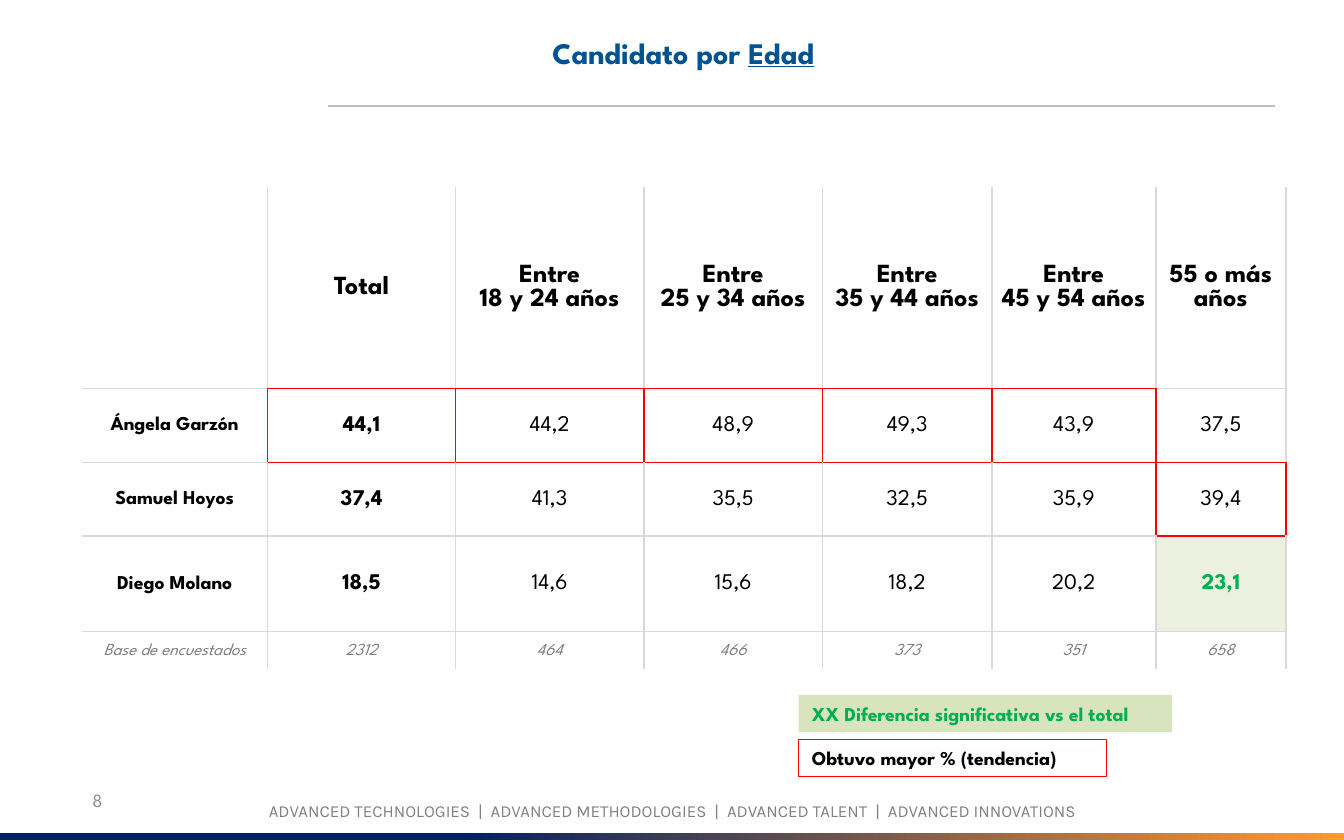
from dataclasses import dataclass
from typing import Optional

from lxml.etree import SubElement
from pptx import Presentation
from pptx.dml.color import RGBColor
from pptx.enum.shapes import MSO_CONNECTOR as Connector, MSO_SHAPE as Shape
from pptx.enum.text import MSO_ANCHOR as Anchor, PP_ALIGN as Align
from pptx.oxml.ns import qn
from pptx.util import Pt

WHITE = RGBColor(0xFF, 0xFF, 0xFF)
BLACK = RGBColor(0, 0, 0)
RED = RGBColor(0xFF, 0, 0)
GREEN = RGBColor(0, 0xB0, 0x50)
GREEN_PALE = RGBColor(0xEB, 0xF1, 0xDE)
GREEN_LIGHT = RGBColor(0xD7, 0xE4, 0xBD)
BLUE = RGBColor(0, 0x53, 0x92)
NAVY = RGBColor(0, 0x20, 0x60)
ORANGE = RGBColor(0xFF, 0x99, 0x33)
GRID = RGBColor(0xD9, 0xD9, 0xD9)
RULE = RGBColor(0xBF, 0xBF, 0xBF)
GREY = RGBColor(0x80, 0x80, 0x80)
PAGE_GREY = RGBColor(0x8C, 0x8C, 0x8C)

SPARTAN, KARLA = "League Spartan", "Karla"


@dataclass(frozen=True)
class Style:
    size: float
    color: RGBColor = BLACK
    bold: bool = False
    italic: bool = False
    face: str = SPARTAN


@dataclass(frozen=True)
class Label:
    text: str
    left: float
    top: float
    width: float
    height: float
    style: Style
    anchor: Anchor = Anchor.MIDDLE


@dataclass(frozen=True)
class LegendKey:
    text: str
    top: float
    width: float
    fill: RGBColor
    color: RGBColor
    outline: Optional[RGBColor] = None


HEADER = Style(14, bold=True)
NAME = Style(10.5, bold=True)
TOTAL = Style(12, bold=True)
VALUE = Style(12)
SIGNIFICANT = Style(12, GREEN, bold=True)
BASE = Style(9, GREY, italic=True)

COLUMN_WIDTHS = [99.4, 100.8, 100.8, 95.8, 90.7, 87.8, 69.8]
ROW_HEIGHTS = [108, 39.6, 39.6, 51.1, 20.2]
RESULTS = [
    ["", "Total", "Entre\n18 y 24 años", "Entre\n25 y 34 años",
     "Entre\n35 y 44 años", "Entre\n45 y 54 años", "55 o más años"],
    ["Ángela Garzón", "44,1", "44,2", "48,9", "49,3", "43,9", "37,5"],
    ["Samuel Hoyos", "37,4", "41,3", "35,5", "32,5", "35,9", "39,4"],
    ["Diego Molano", "18,5", "14,6", "15,6", "18,2", "20,2", "23,1"],
    ["Base de encuestados", "2312", "464", "466", "373", "351", "658"],
]
LAST_ROW, LAST_COLUMN = len(RESULTS) - 1, len(RESULTS[0]) - 1
SIGNIFICANT_CELL = (3, 6)
# The candidate with the highest share in each column
LEADERS = {
    (max(range(1, LAST_ROW), key=lambda row: float(RESULTS[row][column].replace(",", "."))), column)
    for column in range(1, LAST_COLUMN + 1)
}

LABELS = [
    Label("ADVANCED TECHNOLOGIES  |  ADVANCED METHODOLOGIES  |  ADVANCED TALENT  |  ADVANCED INNOVATIONS",
          -0.7, 422.6, 721.4, 23.8, Style(9, GREY, face=KARLA)),
    Label("8", 13, 416.9, 78.5, 23.8, Style(10, PAGE_GREY)),
    Label("Candidato por ", 87.8, 15.1, 556.6, 26.6, Style(16, BLUE, bold=True), Anchor.TOP),
]
LEGEND = [
    LegendKey("Obtuvo mayor % (tendencia)", 396.2, 165, WHITE, BLACK, RED),
    LegendKey("XX Diferencia significativa vs el total", 372.3, 200, GREEN_LIGHT, GREEN),
]


def write(frame, text: str, style: Style, align: Align = Align.CENTER) -> None:
    frame.text = text
    for paragraph in frame.paragraphs:
        paragraph.alignment = align
        font = paragraph.font
        font.name, font.size = style.face, Pt(style.size)
        font.bold, font.italic = style.bold, style.italic
        font.color.rgb = style.color


def add_label(slide, label: Label):
    box = slide.shapes.add_textbox(Pt(label.left), Pt(label.top), Pt(label.width), Pt(label.height))
    box.text_frame.word_wrap = True
    box.text_frame.vertical_anchor = label.anchor
    write(box.text_frame, label.text, label.style)
    return box.text_frame


def add_legend_key(slide, key: LegendKey) -> None:
    swatch = slide.shapes.add_shape(Shape.RECTANGLE, Pt(427.9), Pt(key.top), Pt(key.width), Pt(19.9))
    swatch.shadow.inherit = False
    swatch.fill.solid()
    swatch.fill.fore_color.rgb = key.fill
    if key.outline:
        swatch.line.color.rgb = key.outline
        swatch.line.width = Pt(0.75)
    else:
        swatch.line.fill.background()
    swatch.text_frame.word_wrap = False
    swatch.text_frame.vertical_anchor = Anchor.TOP
    write(swatch.text_frame, key.text, Style(10.5, key.color, bold=True), Align.LEFT)


def cell_style(row: int, column: int) -> Style:
    if row == 0:
        return HEADER
    if row == LAST_ROW:
        return BASE
    if (row, column) == SIGNIFICANT_CELL:
        return SIGNIFICANT
    return {0: NAME, 1: TOTAL}.get(column, VALUE)


def set_borders(cell, row: int, column: int) -> None:
    """Red around a leading share, grey on the other grid lines, open outer edges."""
    edges = [
        ("a:lnL", (row, column - 1), column > 0),
        ("a:lnR", (row, column + 1), True),
        ("a:lnT", (row - 1, column), row > 0),
        ("a:lnB", (row + 1, column), row < LAST_ROW),
    ]
    properties = cell._tc.get_or_add_tcPr()
    for tag, neighbour, visible in edges:
        edge = SubElement(properties, qn(tag), w=str(Pt(1)))
        if visible:
            color = RED if LEADERS & {(row, column), neighbour} else GRID
            SubElement(SubElement(edge, qn("a:solidFill")), qn("a:srgbClr"), val=str(color))
        else:
            SubElement(edge, qn("a:noFill"))


def add_results(slide) -> None:
    table = slide.shapes.add_table(
        len(ROW_HEIGHTS), len(COLUMN_WIDTHS), Pt(43.9), Pt(100.1),
        Pt(sum(COLUMN_WIDTHS)), Pt(sum(ROW_HEIGHTS))).table
    table.first_row = table.horz_banding = False
    for column, width in zip(table.columns, COLUMN_WIDTHS):
        column.width = Pt(width)
    for row, height in zip(table.rows, ROW_HEIGHTS):
        row.height = Pt(height)
    for row, texts in enumerate(RESULTS):
        for column, text in enumerate(texts):
            cell = table.cell(row, column)
            cell.margin_left = cell.margin_right = cell.margin_top = Pt(0.72)
            cell.margin_bottom = Pt(0)
            cell.vertical_anchor = Anchor.MIDDLE
            write(cell.text_frame, text, cell_style(row, column))
            set_borders(cell, row, column)
            if (row, column) == SIGNIFICANT_CELL:
                cell.fill.solid()
                cell.fill.fore_color.rgb = GREEN_PALE
            else:
                cell.fill.background()


def main() -> None:
    deck = Presentation()
    deck.slide_width, deck.slide_height = Pt(720), Pt(450)
    slide = deck.slides.add_slide(deck.slide_layouts[6])

    # Footer band
    band = slide.shapes.add_shape(Shape.RECTANGLE, Pt(0), Pt(446.4), Pt(720), Pt(3.6))
    band.shadow.inherit = False
    band.line.fill.background()
    band.fill.gradient()
    band.fill.gradient_angle = 0
    for stop, position, color in zip(band.fill.gradient_stops, (0.34, 1), (NAVY, ORANGE)):
        stop.position, stop.color.rgb = position, color

    # Footer, page number and title with its rule
    *_, title = [add_label(slide, label) for label in LABELS]
    age = title.paragraphs[0].add_run()
    age.text = "Edad"
    age.font.underline = True
    rule = slide.shapes.add_connector(Connector.STRAIGHT, Pt(175.7), Pt(56.7), Pt(683.3), Pt(56.7))
    rule.line.color.rgb = RULE
    rule.line.width = Pt(0.75)
    SubElement(rule._element.spPr, qn("a:effectLst"))

    # Results by age and legend
    add_results(slide)
    for key in LEGEND:
        add_legend_key(slide, key)

    deck.save("out.pptx")


if __name__ == "__main__":
    main()
